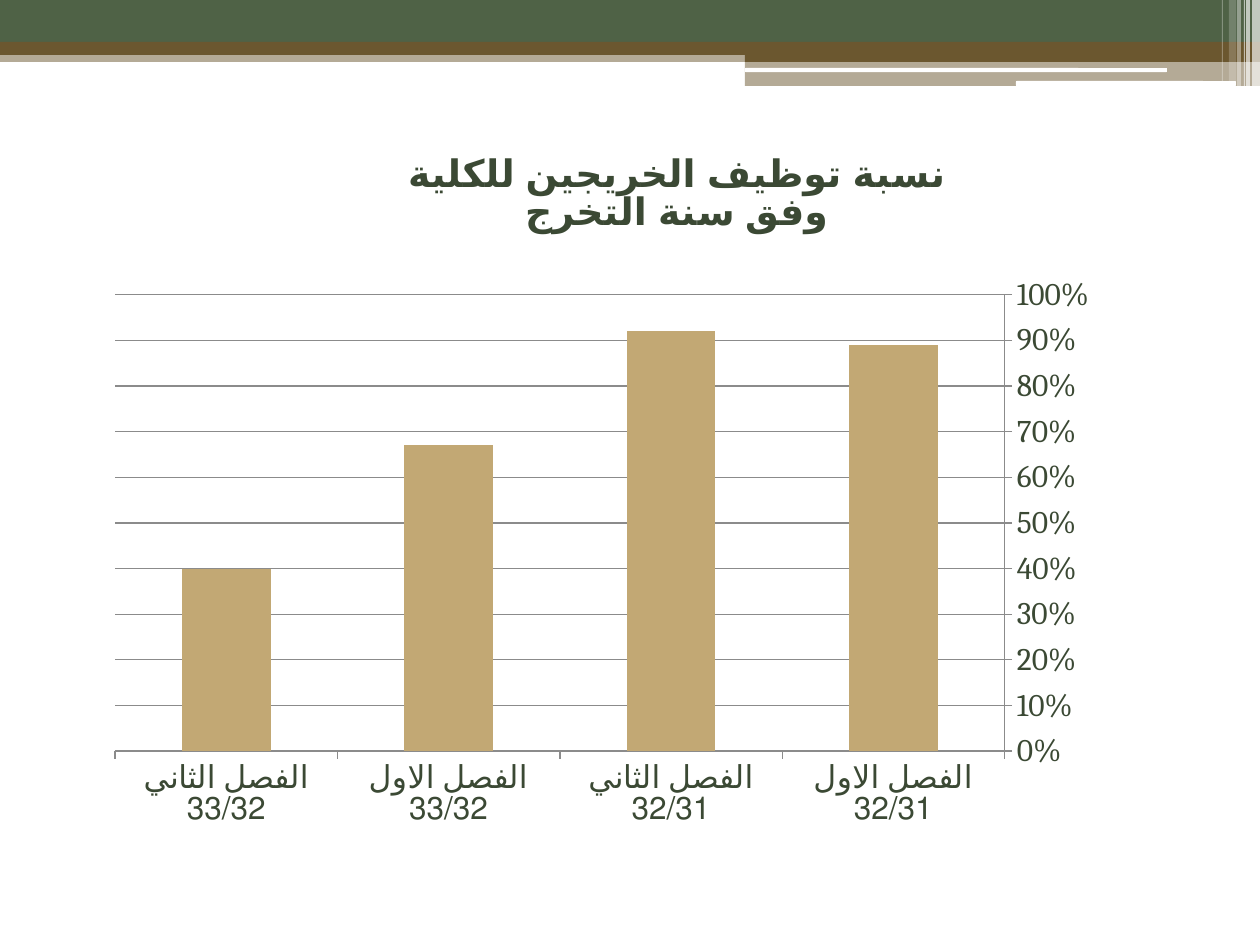
from lxml import etree
from pptx import Presentation
from pptx.chart.data import CategoryChartData
from pptx.dml.color import RGBColor
from pptx.enum.chart import XL_CHART_TYPE, XL_TICK_MARK
from pptx.enum.shapes import MSO_SHAPE
from pptx.oxml import parse_xml
from pptx.oxml.ns import nsdecls, qn
from pptx.util import Emu, Pt

COLUMN_STACKED = XL_CHART_TYPE.COLUMN_STACKED
TICK_OUTSIDE, TICK_NONE = XL_TICK_MARK.OUTSIDE, XL_TICK_MARK.NONE
RECTANGLE, ROUNDED = MSO_SHAPE.RECTANGLE, MSO_SHAPE.ROUNDED_RECTANGLE

PX_PER_INCH = 126
WIDTH, HEIGHT = 1260, 945
COLORS = {"green": "4F6246", "brown": "6B572F", "white": "FFFFFF",
          "text": "3B4934", "bar": "C2A874", "line": "8B8B8B"}
FONT = "Cambria"


def px(length):
    return Emu(round(length * 914400 / PX_PER_INCH))


def color(name):
    return RGBColor.from_string(COLORS[name])


class SlideBuilder:
    def __init__(self, slide):
        self.slide = slide

    def band(self, left, top, width, height, fill, opacity=100, kind=RECTANGLE):
        shape = self.slide.shapes.add_shape(
            kind, px(left), px(top), px(width), px(height))
        shape.shadow.inherit = False
        shape.line.fill.background()
        shape.fill.solid()
        shape.fill.fore_color.rgb = color(fill)
        if opacity < 100:
            rgb = shape.fill._xPr.find(".//" + qn("a:srgbClr"))
            etree.SubElement(rgb, qn("a:alpha"), val=str(opacity * 1000))

    def style_font(self, font, size, bold=False):
        font.name, font.size, font.bold = FONT, Pt(size), bold
        font.color.rgb = color("text")

    def style_line(self, line):
        line.color.rgb = color("line")
        line.width = Pt(0.75)

    def place(self, element, x, y, w=None, h=None):
        """Give a chart part a manual layout in fractions of the chart."""
        inner = '<c:layoutTarget val="inner"/>' if w else ""
        values = {"x": x, "y": y, "w": w, "h": h}
        modes = '<c:xMode val="edge"/><c:yMode val="edge"/>'
        parts = "".join(f'<c:{key} val="{value}"/>'
                        for key, value in values.items() if value is not None)
        layout = parse_xml(f'<c:layout {nsdecls("c")}><c:manualLayout>'
                           f'{inner}{modes}{parts}</c:manualLayout></c:layout>')
        for old in element.findall(qn("c:layout")):
            element.remove(old)
        text = element.find(qn("c:tx"))
        if text is None:
            element.insert(0, layout)
        else:
            text.addnext(layout)

    def chart_title(self, chart, lines, x, y):
        chart.has_title = True
        frame = chart.chart_title.text_frame
        for index, line in enumerate(lines):
            paragraph = frame.add_paragraph() if index else frame.paragraphs[0]
            paragraph._p.get_or_add_pPr().set("rtl", "1")
            run = paragraph.add_run()
            run.text = line
            self.style_font(run.font, 21.6, bold=True)
        self.place(chart.chart_title._element, x, y)

    def column_chart(self, left, top, width, height, categories, values, plot_area):
        data = CategoryChartData(number_format="0%")
        data.categories = categories
        data.add_series("Series 1", values)
        chart = self.slide.shapes.add_chart(
            COLUMN_STACKED, px(left), px(top), px(width), px(height), data).chart
        chart.has_legend = False
        self.style_font(chart.font, 18)

        plot = chart.plots[0]
        plot.gap_width, plot.overlap = 150, 100
        plot.vary_by_categories = False
        fill = plot.series[0].format.fill
        fill.solid()
        fill.fore_color.rgb = color("bar")

        for axis in (chart.category_axis, chart.value_axis):
            axis.major_tick_mark, axis.minor_tick_mark = TICK_OUTSIDE, TICK_NONE
            self.style_line(axis.format.line)
        chart.category_axis.reverse_order = True
        axis = chart.value_axis
        axis.minimum_scale, axis.maximum_scale, axis.major_unit = 0, 1, 0.1
        axis.has_major_gridlines = True
        self.style_line(axis.major_gridlines.format.line)
        axis.tick_labels.number_format = "0%"
        axis.tick_labels.number_format_is_linked = False
        self.place(chart._chartSpace.find(".//" + qn("c:plotArea")), *plot_area)
        return chart


def main():
    presentation = Presentation()
    presentation.slide_width, presentation.slide_height = px(WIDTH), px(HEIGHT)
    slide = presentation.slides.add_slide(presentation.slide_layouts[6])
    builder = SlideBuilder(slide)

    # Header bands
    builder.band(0, 50, WIDTH, 12, "brown", 50)
    builder.band(0, 0, WIDTH, 42, "green")
    builder.band(0, 42, WIDTH, 13, "brown")
    builder.band(745, 49, 515, 13, "brown")
    builder.band(745, 62, 515, 24, "brown", 50)
    builder.band(745, 68, 422, 4, "white", kind=ROUNDED)
    builder.band(1016, 81, 220, 5, "white", kind=ROUNDED)

    # Pale vertical stripes at the right end
    for left, width, height, opacity in (
            (1252, 8, 86, 65), (1246, 4, 86, 65), (1244, 1, 86, 60),
            (1237, 4, 86, 40), (1229, 7, 81, 20), (1222, 1, 81, 30)):
        builder.band(left, 0, width, height, "white", opacity)

    # Graduate employment chart, read from right to left
    chart = builder.column_chart(
        42, 0, WIDTH, HEIGHT,
        ["الفصل الاول 32/31", "الفصل الثاني 32/31",
         "الفصل الاول 33/32", "الفصل الثاني 33/32"],
        [0.89, 0.92, 0.67, 0.4],
        plot_area=(0.058, 0.312, 0.706, 0.483))
    builder.chart_title(
        chart, ["نسبة توظيف الخريجين للكلية", "وفق سنة التخرج"], 0.287, 0.16)

    presentation.save("out.pptx")


if __name__ == "__main__":
    main()
